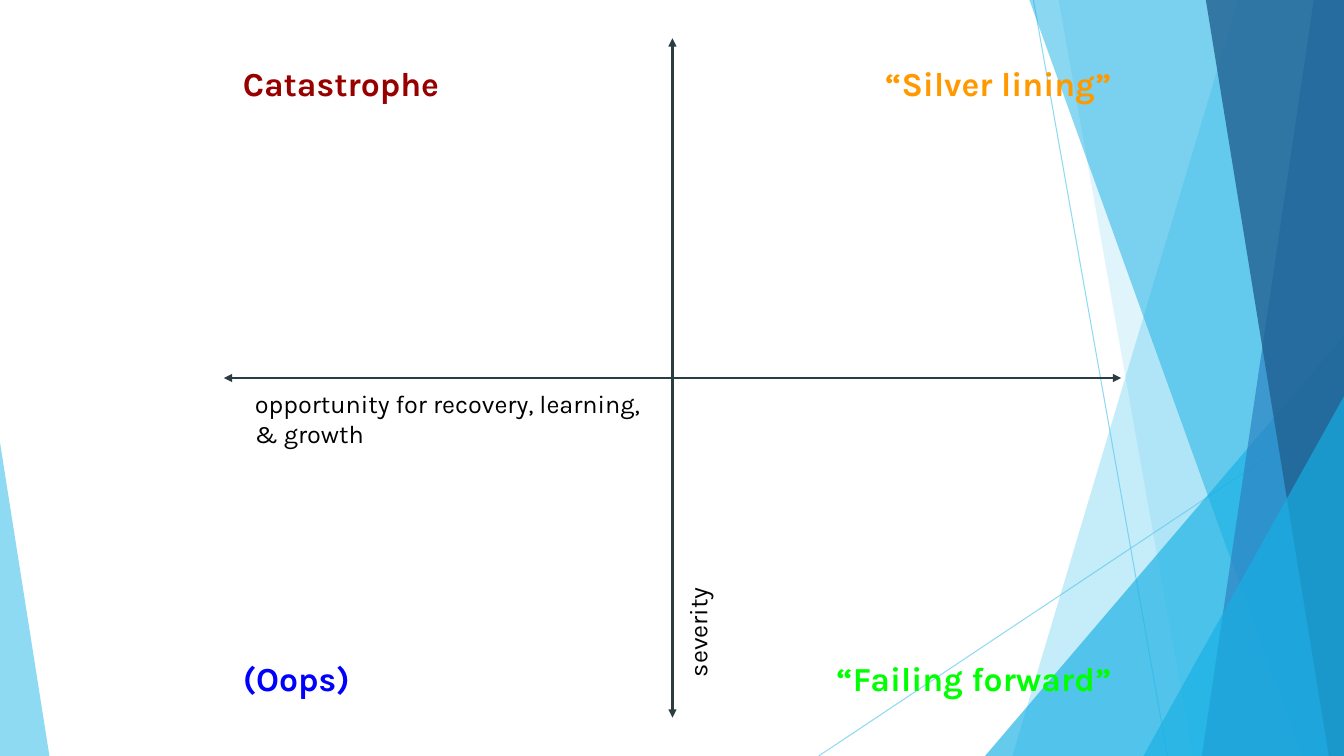
from dataclasses import dataclass
from pptx import Presentation
from pptx.dml.color import RGBColor
from pptx.enum.shapes import MSO_CONNECTOR, MSO_SHAPE
from pptx.enum.text import MSO_ANCHOR, PP_ALIGN
from pptx.oxml.ns import qn
from pptx.util import Inches, Pt
from lxml.etree import SubElement


@dataclass(frozen=True)
class Theme:
    font: str = "Karla"
    label: int = 18
    title: int = 24
    thin: float = 0.75
    thick: float = 1.5
    pad: float = 0.1
    white: str = "FFFFFF"
    black: str = "000000"
    axis: str = "2C3C43"
    sky: str = "5FCBEF"
    cyan: str = "17B0E4"
    blue: str = "2E83C3"
    navy: str = "226292"
    red: str = "980000"
    pure: str = "0000FF"
    gold: str = "FF9900"
    green: str = "00FF00"


THEME = Theme()
WIDE, HIGH = 13.33, 7.5


def paint(fill, color, alpha=100):
    fill.solid()
    fill.fore_color.rgb = RGBColor.from_string(color)
    return alpha


def fade(props, alpha):
    tint = props.find(".//" + qn("a:srgbClr"))
    SubElement(tint, qn("a:alpha"), val=str(alpha * 1000))


def draw_line(slide, start, end, color, width, alpha=100, arrows=False):
    ends = [Inches(n) for n in (*start, *end)]
    line = slide.shapes.add_connector(MSO_CONNECTOR.STRAIGHT, *ends)
    line.line.width = Pt(width)
    line.line.color.rgb = RGBColor.from_string(color)
    props = line.line._get_or_add_ln()
    if alpha < 100:
        fade(props, alpha)
    if arrows:
        for tag in ("a:headEnd", "a:tailEnd"):
            SubElement(props, qn(tag), type="triangle")
    SubElement(line._element.spPr, qn("a:effectLst"))


def finish(shape, color, alpha):
    paint(shape.fill, color)
    fade(shape._element.spPr, alpha)
    shape.line.fill.background()
    shape.shadow.inherit = False


def draw_pane(slide, box, top, base, color, alpha):
    left, head, width, height = box
    right, foot = left + width, head + height
    dots = [(top, head), (right, head), (right, foot), (base, foot)]
    first, *rest = [(Inches(x), Inches(y)) for x, y in dots]
    form = slide.shapes.build_freeform(*first)
    form.add_line_segments(rest, close=True)
    finish(form.convert_to_shape(), color, alpha)


def draw_wedge(slide, box, tip, color, alpha):
    spots = [Inches(n) for n in box]
    wedge = slide.shapes.add_shape(MSO_SHAPE.ISOSCELES_TRIANGLE, *spots)
    wedge.adjustments[0] = tip
    finish(wedge, color, alpha)


def draw_facets(slide, box):
    left, top, width, height = box
    right, foot = left + width, top + height
    for start, end in (((10.25, top), (11.58, foot)), ((right, 4.03), (8.12, foot))):
        draw_line(slide, start, end, THEME.sky, THEME.thin, 70)

    def wedge(span, rise, tip, color, alpha, edge=right):
        draw_wedge(slide, (edge - span, foot - rise, span, rise), tip, color, alpha)

    def panes(rows):
        for row in rows:
            draw_pane(slide, box, *row)

    panes([(12.28, 10.04, THEME.sky, 36), (10.5, 11.83, THEME.sky, 20)])
    wedge(3.56, 4.17, 1, THEME.cyan, 66)
    panes([
        (10.21, 12.91, THEME.cyan, 50),
        (13.03, 11.92, THEME.blue, 70),
        (11.96, 13.18, THEME.navy, 80),
    ])
    wedge(1.99, 3.57, 1, THEME.cyan, 66)
    wedge(0.49, 3.11, 0, THEME.sky, 70, left + 0.49)


def add_text(slide, box, text, color, size, bold=False, align=PP_ALIGN.LEFT, turn=0):
    shape = slide.shapes.add_textbox(*[Inches(n) for n in box])
    shape.rotation = turn
    frame = shape.text_frame
    frame.word_wrap = True
    frame.vertical_anchor = MSO_ANCHOR.TOP
    frame.margin_left = frame.margin_right = Inches(THEME.pad)
    frame.margin_top = frame.margin_bottom = Inches(THEME.pad)
    para = frame.paragraphs[0]
    para.alignment = align
    run = para.add_run()
    run.text = text
    run.font.name = THEME.font
    run.font.size = Pt(size)
    run.font.bold = bold
    run.font.color.rgb = RGBColor.from_string(color)


def draw_axes(slide, box):
    left, top, width, height = box
    right, foot = left + width, top + height
    midx, midy = left + width / 2, top + height / 2
    for start, end in (((midx, top), (midx, foot)), ((left, midy), (right, midy))):
        draw_line(slide, start, end, THEME.axis, THEME.thick, arrows=True)
    add_text(slide, (left + 0.21, midy, 4.09, 0.39),
             "opportunity for recovery, learning, & growth", THEME.black, THEME.label)
    add_text(slide, (midx - 0.63, foot - 1.34, 1.66, 0.41),
             "severity", THEME.black, THEME.label, turn=270)


def draw_names(slide, box):
    left, top, width, height = box
    right, low = left + width, top + height - 0.48
    names = [
        ("Catastrophe", THEME.red, False, top, 2.44, 1.55),
        ("(Oops)", THEME.pure, False, low, 2.6, 0.48),
        ("“Silver lining”", THEME.gold, True, top, 2.66, 1.18),
        ("“Failing forward”", THEME.green, True, low, 3.17, 0.48),
    ]
    for text, color, east, head, span, tall in names:
        spot = right - span if east else left
        align = PP_ALIGN.RIGHT if east else PP_ALIGN.LEFT
        add_text(slide, (spot, head, span, tall), text, color, THEME.title, True, align)


def main():
    deck = Presentation()
    deck.slide_width, deck.slide_height = Inches(WIDE), Inches(HIGH)
    slide = deck.slides.add_slide(deck.slide_layouts[6])
    paint(slide.background.fill, THEME.white)
    draw_facets(slide, (0, 0, WIDE, HIGH))
    draw_axes(slide, (2.22, 0.38, 8.9, 6.74))
    draw_names(slide, (2.31, 0.52, 8.81, 6.39))
    deck.save("out.pptx")


if __name__ == "__main__":
    main()
